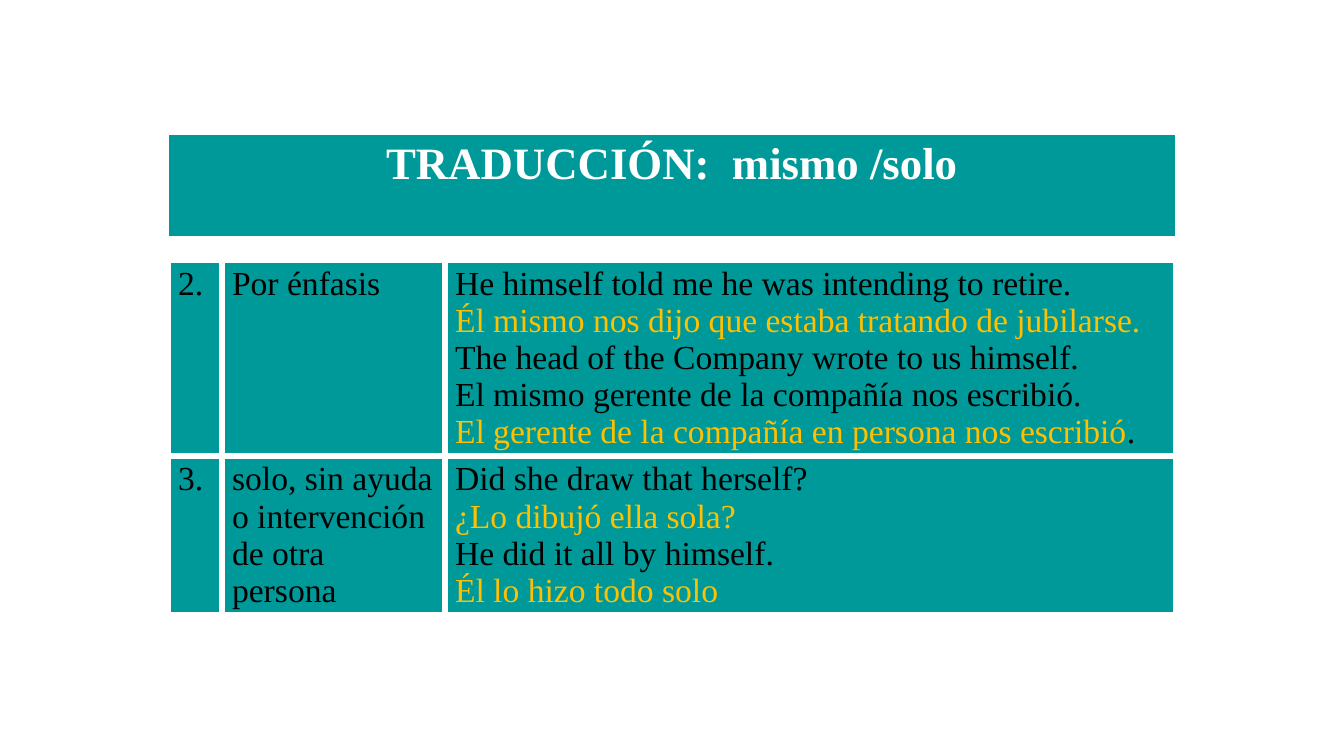
from lxml import etree
from pptx import Presentation
from pptx.dml.color import RGBColor as RGB
from pptx.enum.text import PP_ALIGN as ALIGN
from pptx.oxml.ns import qn
from pptx.util import Emu, Pt

PX = 914400 / 100.8
COLORS = {"teal": "009999", "white": "FFFFFF", "black": "000000", "gold": "FFC000"}
FONT = "Times New Roman"
COLUMNS = [54, 223, 731]
ROWS = [104, 22, 196, 158]
LEFT, TOP = 168, 134
THICK = dict(L=4.5, R=4.5, T=4.5, B=4.5)

# Each example is a line: a list of (text, colour) runs.
USES = [
    ("2.", "Por énfasis", [
        [("He himself told me he was intending to retire.", "black")],
        [("Él mismo nos dijo que estaba tratando de jubilarse.", "gold")],
        [("The head of the Company wrote to us himself.", "black")],
        [("El mismo gerente de la compañía nos escribió.", "black")],
        [("El gerente de la compañía en persona nos escribió", "gold"), (".", "black")],
    ]),
    ("3.", "solo, sin ayuda o intervención de otra persona", [
        [("Did she draw that herself?", "black")],
        [("¿Lo dibujó ella sola?", "gold")],
        [("He did it all by himself.", "black")],
        [("Él lo hizo todo solo", "gold")],
    ]),
]


def px(n):
    return Emu(round(n * PX))


class Deck:
    def __init__(self, width, height):
        self.prs = Presentation()
        self.prs.slide_width, self.prs.slide_height = px(width), px(height)
        self.s = self.prs.slides.add_slide(self.prs.slide_layouts[6])

    def table(self, left, top, columns, rows):
        frame = self.s.shapes.add_table(len(rows), len(columns), px(left), px(top),
                                        px(sum(columns)), px(sum(rows)))
        table = frame.table
        table.first_row = table.horz_banding = False
        for column, width in zip(table.columns, columns):
            column.width = px(width)
        for row, height in zip(table.rows, rows):
            row.height = px(height)
        return table

    def style(self, cell, fill, borders):
        """Set the fill and the white borders, given in points by side."""
        tcPr = cell._tc.get_or_add_tcPr()
        for side, width in borders.items():
            ln = etree.SubElement(tcPr, qn(f"a:ln{side}"), w=str(Pt(width)))
            solid = etree.SubElement(ln, qn("a:solidFill"))
            etree.SubElement(solid, qn("a:srgbClr"), val=COLORS["white"])
        cell.fill.solid()
        cell.fill.fore_color.rgb = RGB.from_string(COLORS[fill])

    def text(self, cell, lines, size=24, bold=False, align=ALIGN.LEFT):
        tf = cell.text_frame
        for i, line in enumerate(lines):
            p = tf.add_paragraph() if i else tf.paragraphs[0]
            p.alignment = align
            for text, color in line:
                r = p.add_run()
                r.text = text
                r.font.name, r.font.size, r.font.bold = FONT, Pt(size), bold
                r.font.color.rgb = RGB.from_string(COLORS[color])

    def band(self, table, row, fill, borders):
        """Merge a row across the table and return its cell."""
        cells = list(table.rows[row].cells)
        cells[0].merge(cells[-1])
        for cell in cells:
            self.style(cell, fill, borders)
        return cells[0]


def main():
    deck = Deck(1344, 756)
    table = deck.table(LEFT, TOP, COLUMNS, ROWS)

    title = deck.band(table, 0, "teal", dict(L=1, R=1, T=1, B=3))
    deck.text(title, [[("TRADUCCIÓN:  mismo /solo", "white")]], 32, True, ALIGN.CENTER)

    spacer = deck.band(table, 1, "white", dict(L=1, R=1, T=1, B=4.5))
    # A small empty line keeps the spacer row from growing.
    etree.SubElement(spacer.text_frame.paragraphs[0]._p, qn("a:endParaRPr"), sz="700")

    for row, (number, use, examples) in enumerate(USES, start=2):
        contents = [[[(number, "black")]], [[(use, "black")]], examples]
        for column, lines in enumerate(contents):
            cell = table.cell(row, column)
            deck.style(cell, "teal", THICK)
            deck.text(cell, lines)

    deck.prs.save("out.pptx")


if __name__ == "__main__":
    main()
